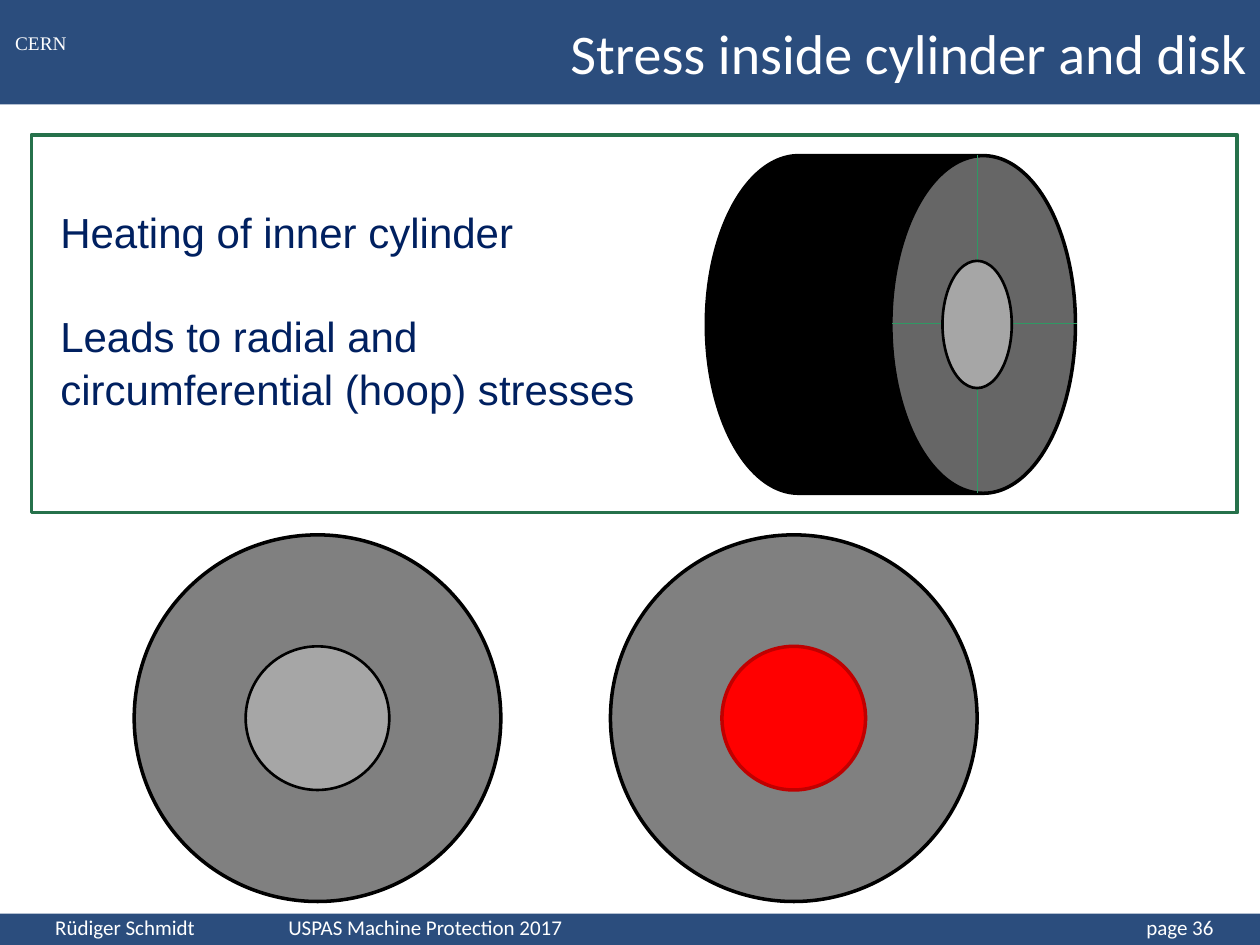
from lxml import etree
from pptx import Presentation
from pptx.dml.color import RGBColor
from pptx.enum.shapes import MSO_CONNECTOR, MSO_SHAPE
from pptx.enum.text import MSO_ANCHOR, PP_ALIGN
from pptx.oxml.ns import qn
from pptx.util import Inches, Pt

RECT, OVAL, CAN = MSO_SHAPE.RECTANGLE, MSO_SHAPE.OVAL, MSO_SHAPE.CAN
STRAIGHT = MSO_CONNECTOR.STRAIGHT
LEFT, CENTER, RIGHT = PP_ALIGN.LEFT, PP_ALIGN.CENTER, PP_ALIGN.RIGHT
TOP, MIDDLE, BOTTOM = MSO_ANCHOR.TOP, MSO_ANCHOR.MIDDLE, MSO_ANCHOR.BOTTOM

WHITE = RGBColor(0xFF, 0xFF, 0xFF)
BLACK = RGBColor(0x00, 0x00, 0x00)
BAR = RGBColor(0x06, 0x2F, 0x67)
NAVY = RGBColor(0x00, 0x20, 0x60)
FRAME = RGBColor(0x26, 0x71, 0x4B)
AXIS = RGBColor(0x2F, 0x98, 0x64)
GREY = RGBColor(0x80, 0x80, 0x80)
LIGHT = RGBColor(0xA6, 0xA6, 0xA6)
RED = RGBColor(0xFF, 0x00, 0x00)
DARK_RED = RGBColor(0xC0, 0x00, 0x00)


class SlideBuilder:
    def __init__(self, s):
        self.s = s

    def shape(self, kind, x, y, w, h, fill=None, line=None, width=2, alpha=100):
        sp = self.s.shapes.add_shape(kind, Inches(x), Inches(y), Inches(w), Inches(h))
        sp.shadow.inherit = False
        if fill is None:
            sp.fill.background()
        else:
            sp.fill.solid()
            sp.fill.fore_color.rgb = fill
        if alpha < 100:
            color = sp.element.spPr.find(qn("a:solidFill"))[0]
            etree.SubElement(color, qn("a:alpha")).set("val", str(alpha * 1000))
        if line is None:
            sp.line.fill.background()
        else:
            sp.line.color.rgb = line
            sp.line.width = Pt(width)
        return sp

    def circle(self, cx, cy, d, fill, line, width=2):
        return self.shape(OVAL, cx - d / 2, cy - d / 2, d, d, fill, line, width)

    def line(self, x1, y1, x2, y2, color, width):
        c = self.s.shapes.add_connector(
            STRAIGHT, Inches(x1), Inches(y1), Inches(x2), Inches(y2))
        c.line.color.rgb = color
        c.line.width = Pt(width)
        etree.SubElement(c.element.spPr, qn("a:effectLst"))

    def fill_text(self, tf, lines, font, size, color, align=LEFT, anchor=TOP,
                  tabs=(), spacing=None, gap=0):
        tf.word_wrap = True
        tf.vertical_anchor = anchor
        for i, text in enumerate(lines):
            p = tf.paragraphs[0] if i == 0 else tf.add_paragraph()
            p.alignment = align
            if spacing:
                p.line_spacing = spacing
            if i:
                p.space_before = Pt(gap)
            if tabs:
                tab_list = etree.SubElement(p._p.get_or_add_pPr(), qn("a:tabLst"))
                for pos in tabs:
                    tab = etree.SubElement(tab_list, qn("a:tab"))
                    tab.set("pos", str(Inches(pos)))
                    tab.set("algn", "l")
            r = p.add_run()
            r.text = text
            r.font.name = font
            r.font.size = Pt(size)
            r.font.color.rgb = color

    def text(self, x, y, w, h, lines, font, size, color, **style):
        sp = self.s.shapes.add_textbox(Inches(x), Inches(y), Inches(w), Inches(h))
        self.fill_text(sp.text_frame, lines, font, size, color, **style)

    def title(self, x, y, w, h, text):
        sp = self.s.shapes.title
        sp.left, sp.top, sp.width, sp.height = map(Inches, (x, y, w, h))
        self.fill_text(sp.text_frame, [text], "Calibri", 32, WHITE,
                       align=RIGHT, anchor=MIDDLE)
        # Bring the title in front of the header bar
        sp.element.getparent().append(sp.element)


def main():
    prs = Presentation()
    prs.slide_width, prs.slide_height = Inches(10), Inches(7.5)
    b = SlideBuilder(prs.slides.add_slide(prs.slide_layouts[5]))

    # Header and footer
    for y, h in ((0, 0.83), (7.25, 0.25)):
        b.shape(RECT, 0, y, 10, h, BAR, alpha=85)
    b.text(-0.01, 0.2, 0.67, 0.29, ["CERN"], "Times New Roman", 11, WHITE,
           align=CENTER)
    b.text(0, 7.25, 9.83, 0.26,
           ["\tRüdiger Schmidt\tUSPAS Machine Protection 2017\tpage 36"],
           "Calibri", 12, WHITE, anchor=BOTTOM, tabs=(0.34, 2.19, 9))
    b.title(0.83, 0, 9.17, 0.83, "Stress inside cylinder and disk")

    # Cylinder with axes and inner core
    can = b.shape(CAN, 5.73, 1.11, 2.68, 2.93, BLACK, BLACK)
    can.adjustments[0] = 0.588
    can.rotation = 90
    b.line(7.08, 2.57, 8.55, 2.57, AXIS, 0.75)
    b.line(7.76, 1.23, 7.76, 3.91, AXIS, 0.75)
    b.shape(OVAL, 7.48, 2.07, 0.55, 1.01, LIGHT, BLACK, 1.5)

    # Framed explanation
    b.shape(RECT, 0.25, 1.07, 9.57, 3, line=FRAME)
    b.text(0.38, 1.57, 4.95, 1.72,
           ["Heating of inner cylinder",
            "Leads to radial and circumferential (hoop) stresses"],
           "Arial", 24, NAVY, spacing=1.05, gap=29)

    # Disks: heated and cold core
    for cx, fill, line, width in ((6.3, RED, DARK_RED, 2), (2.52, LIGHT, BLACK, 1.5)):
        b.circle(cx, 5.7, 2.91, GREY, BLACK)
        b.circle(cx, 5.7, 1.14, fill, line, width)

    prs.save("out.pptx")


if __name__ == "__main__":
    main()
